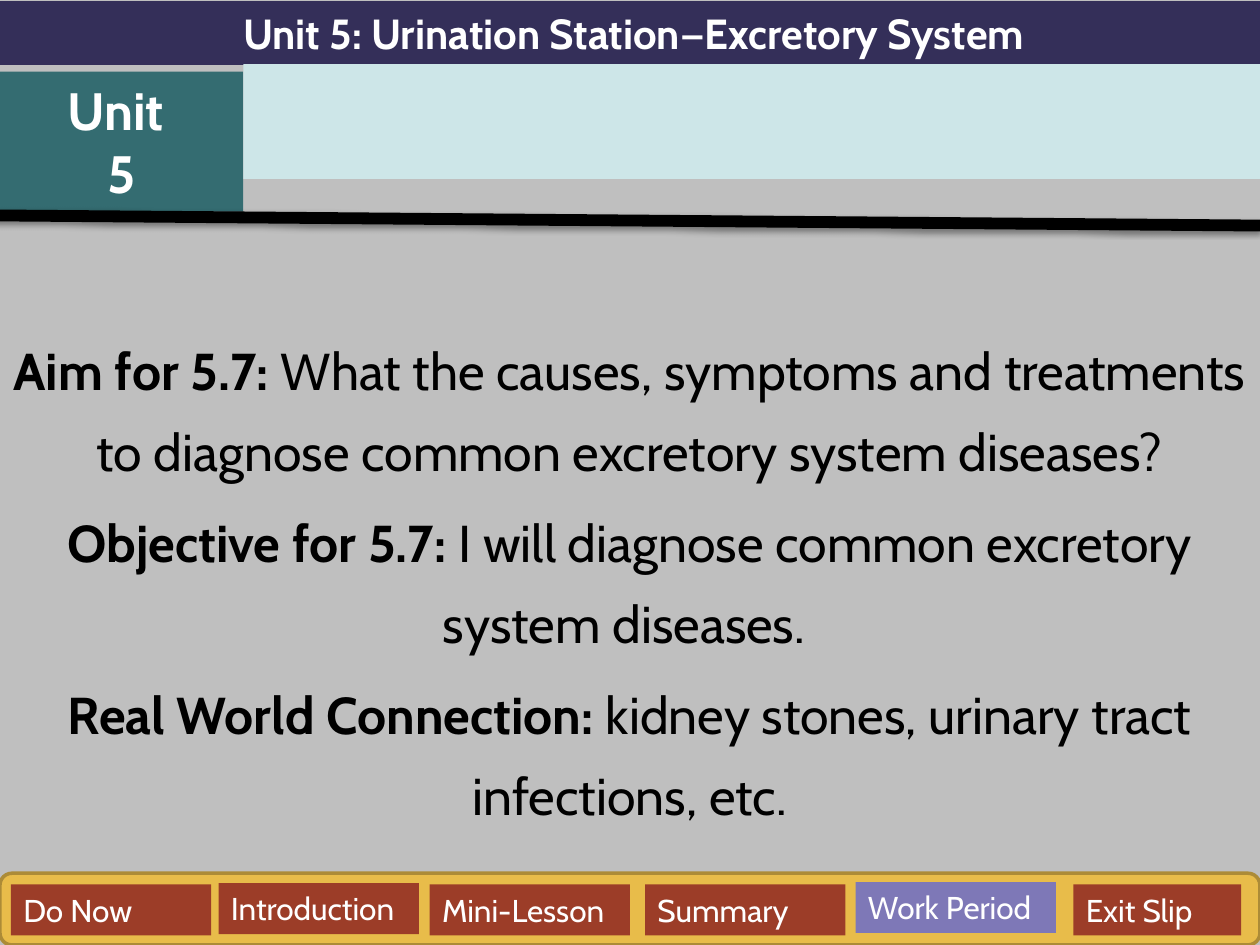
from lxml import etree
from pptx import Presentation
from pptx.dml.color import RGBColor
from pptx.enum import shapes, text
from pptx.oxml.ns import qn
from pptx.util import Pt

FONT = "Cabin"
WHITE, BLACK, RUST, VIOLET = "FFFFFF", "000000", "9C3D28", "7E78B7"
TITLE = "Unit 5: Urination Station—Excretory System"
UNIT = ["Unit ", "5"]
GOALS = [
    ("Aim for 5.7: ", "What the causes, symptoms and treatments to diagnose "
     "common excretory system diseases?"),
    ("Objective for 5.7: ", "I will diagnose common excretory system diseases. "),
    ("Real World Connection:", " kidney stones, urinary tract infections, etc."),
]
BUTTONS = [
    ("Do Now", 6.2, 505.4, 114.5, RUST),
    ("Introduction", 124.9, 504.7, 114.5, RUST),
    ("Mini-Lesson", 245.5, 505.4, 114.5, RUST),
    ("Summary", 368.6, 505.4, 114.5, RUST),
    ("Work Period", 488.9, 504, 114.5, VIOLET),
    ("Exit Slip", 613.4, 505.4, 95.8, RUST),
]
BUTTON_H = 29.1


def rgb(value):
    return RGBColor.from_string(value)


def place(sp, left, top, width, height):
    sp.left, sp.top, sp.width, sp.height = map(Pt, (left, top, width, height))


def paint(sp, color):
    sp.fill.solid()
    sp.fill.fore_color.rgb = rgb(color)


def add_block(box, color, kind=shapes.MSO_SHAPE.RECTANGLE):
    sp = s.shapes.add_shape(kind, *map(Pt, box))
    sp.shadow.inherit = False
    paint(sp, color)
    sp.line.fill.background()
    return sp


def write(sp, paragraphs, size, color=WHITE, bold=False, align="CENTER",
          anchor="TOP", spacing=1.0, before=0, inset_top=3.6):
    tf = sp.text_frame
    tf.word_wrap = True
    tf.auto_size = text.MSO_AUTO_SIZE.NONE
    tf.vertical_anchor = text.MSO_ANCHOR[anchor]
    tf.margin_top = Pt(inset_top)
    for i, runs in enumerate(paragraphs):
        p = tf.add_paragraph() if i else tf.paragraphs[0]
        p.alignment = text.PP_ALIGN[align]
        p.line_spacing = spacing
        p.space_before = Pt(before)
        for content, heavy in runs:
            r = p.add_run()
            r.text = content
            r.font.name = FONT
            r.font.size = Pt(size)
            r.font.bold = heavy or bold
            r.font.color.rgb = rgb(color)


prs = Presentation()
prs.slide_width, prs.slide_height = Pt(720), Pt(540)
s = prs.slides.add_slide(prs.slide_layouts[0])
s.background.fill.solid()
s.background.fill.fore_color.rgb = rgb("BFBFBF")

title, goals = s.shapes.title, s.placeholders[1]
place(title, 0, 0.7, 724, 36.4)
paint(title, "342F59")
write(title, [[(TITLE, True)]], 24, anchor="MIDDLE")

place(goals, 0, 129, 720, 371)
write(goals, [[(label, True), (body, False)] for label, body in GOALS],
      29.6, color=BLACK, spacing=1.3, before=5.9, inset_top=54)

unit = add_block((0, 41, 139, 80), "346C71")
write(unit, [[(line, True)] for line in UNIT], 30)
add_block((139, 36.7, 583, 65.5), "CDE6E8")

rule = s.shapes.add_connector(shapes.MSO_CONNECTOR.STRAIGHT,
                              Pt(-3.6), Pt(123.1), Pt(720), Pt(128.9))
rule.line.color.rgb = rgb(BLACK)
rule.line.width = Pt(6.75)
effects = etree.SubElement(rule._element.spPr, qn("a:effectLst"))
shadow = etree.SubElement(effects, qn("a:outerShdw"), blurRad=str(Pt(3.1)),
                          dist=str(Pt(1.6)), dir="5400000", rotWithShape="0")
tint = etree.SubElement(shadow, qn("a:srgbClr"), val=BLACK)
etree.SubElement(tint, qn("a:alpha"), val="38000")

bar = add_block((0, 499, 720, 41), "E8BC4A", shapes.MSO_SHAPE.ROUNDED_RECTANGLE)
bar.line.color.rgb = rgb("AC8B37")
bar.line.width = Pt(2)
for label, left, top, width, color in BUTTONS:
    button = add_block((left, top, width, BUTTON_H), color)
    write(button, [[(label, False)]], 18, align="LEFT")

prs.save("out.pptx")
